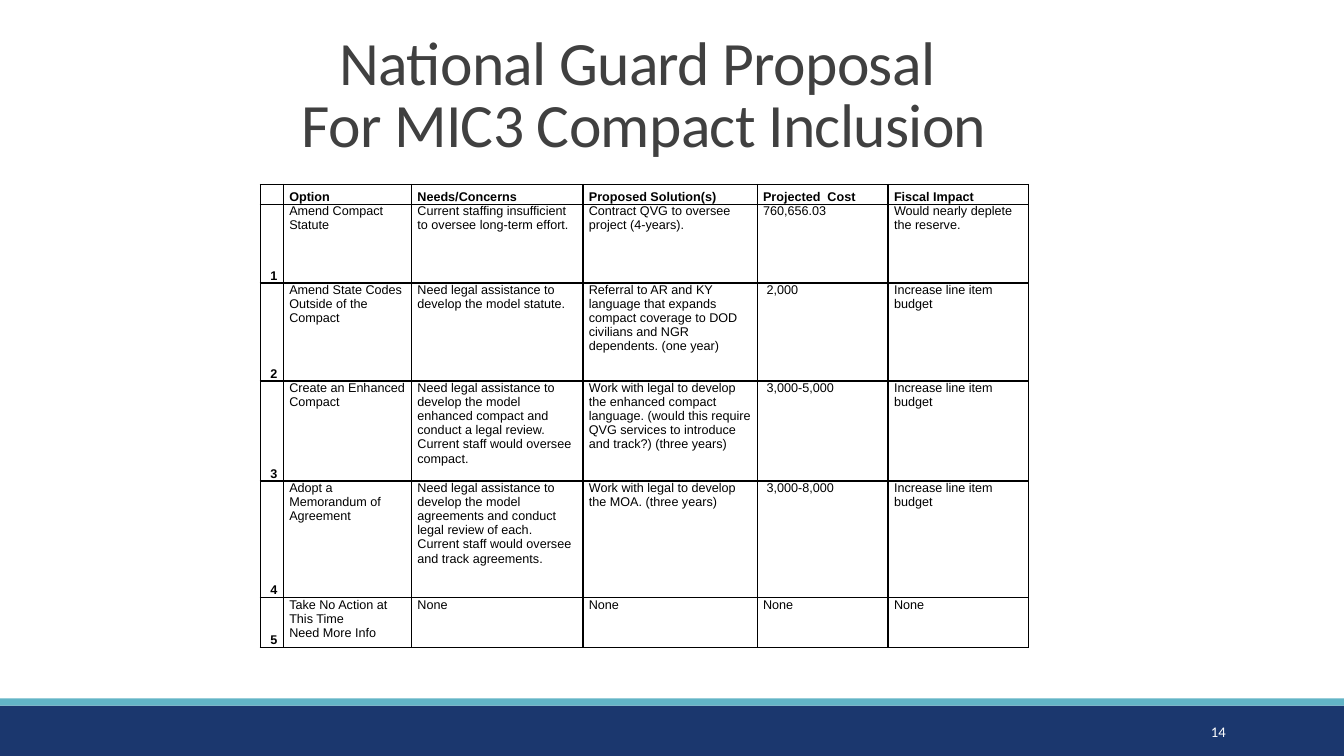
import pptx
import pptx.util
import pptx.dml.color
import pptx.enum.shapes
import pptx.enum.text
from lxml import etree
from pptx.oxml.ns import qn
from pptx.util import Cm

COLORS = {
    "navy": "1B376E",
    "teal": "62B4C6",
    "title": "404040",
    "black": "000000",
    "white": "FFFFFF",
}
ALIGN = pptx.enum.text.PP_ALIGN
ANCHOR = pptx.enum.text.MSO_ANCHOR

SLIDE_W, SLIDE_H = 33.87, 19.05
COL_WIDTHS = [0.58, 3.23, 4.32, 4.39, 3.3, 3.53]
ROW_HEIGHTS = [0.5, 1.98, 2.47, 2.52, 2.94, 1.25]

HEADERS = ["", "Option", "Needs/Concerns", "Proposed Solution(s)",
           "Projected  Cost", "Fiscal Impact"]
OPTIONS = [
    ["Amend Compact Statute",
     "Current staffing insufficient to oversee long-term effort.",
     "Contract QVG to oversee project (4-years).",
     "760,656.03", "Would nearly deplete the reserve."],
    ["Amend State Codes Outside of the Compact",
     "Need legal assistance to develop the model statute.",
     "Referral to AR and KY language that expands compact coverage to DOD "
     "civilians and NGR dependents. (one year)",
     " 2,000", "Increase line item budget"],
    ["Create an Enhanced Compact",
     "Need legal assistance to develop the model enhanced compact and conduct "
     "a legal review. Current staff would oversee compact.",
     "Work with legal to develop the enhanced compact language. (would this "
     "require QVG services to introduce and track?) (three years)",
     " 3,000-5,000", "Increase line item budget"],
    ["Adopt a Memorandum of Agreement",
     "Need legal assistance to develop the model agreements and conduct legal "
     "review of each. Current staff would oversee and track agreements.",
     "Work with legal to develop the MOA. (three years)",
     " 3,000-8,000", "Increase line item budget"],
    ["Take No Action at This Time\nNeed More Info"] + ["None"] * 4,
]


def rgb(name):
    return pptx.dml.color.RGBColor.from_string(COLORS[name])


def add_text(p, text, size=9, font="Arial", color="black", bold=False,
             align=ALIGN.LEFT, spacing=None):
    p.alignment = align
    r = p.add_run()
    r.text = text
    r.font.size = pptx.util.Pt(size)
    r.font.name = font
    r.font.bold = bold
    r.font.color.rgb = rgb(color)
    if spacing is not None:
        r._r.get_or_add_rPr().set("spc", str(spacing))


def add_bar(s, top, height, color):
    sp = s.shapes.add_shape(pptx.enum.shapes.MSO_SHAPE.RECTANGLE,
                            0, Cm(top), Cm(SLIDE_W), Cm(height))
    sp.shadow.inherit = False
    sp.fill.solid()
    sp.fill.fore_color.rgb = rgb(color)
    sp.line.fill.background()


def set_title(s, lines):
    sp = s.shapes.title
    sp.left, sp.top, sp.width, sp.height = Cm(2.26), Cm(0.13), Cm(27.94), Cm(4.04)
    tf = sp.text_frame
    tf.auto_size = pptx.enum.text.MSO_AUTO_SIZE.NONE
    tf.vertical_anchor = ANCHOR.BOTTOM
    p = tf.paragraphs[0]
    p.line_spacing = 0.85
    for i, line in enumerate(lines):
        if i:
            p.add_line_break()
        add_text(p, line, size=44, font="Calibri", color="title",
                 align=ALIGN.CENTER, spacing=-50)


def add_page_number(s, number):
    tf = s.shapes.add_textbox(Cm(27.51), Cm(17.93), Cm(3.63), Cm(1.02)).text_frame
    tf.word_wrap = True
    tf.vertical_anchor = ANCHOR.MIDDLE
    add_text(tf.paragraphs[0], number, size=10.5, font="Calibri",
             color="white", align=ALIGN.RIGHT)


def add_borders(cell):
    tcPr = cell._tc.get_or_add_tcPr()
    for i, side in enumerate(("a:lnL", "a:lnR", "a:lnT", "a:lnB")):
        ln = etree.Element(qn(side), w=str(pptx.util.Pt(1)))
        fill = etree.SubElement(ln, qn("a:solidFill"))
        etree.SubElement(fill, qn("a:srgbClr"), val=COLORS["black"])
        tcPr.insert(i, ln)


def fill_cell(cell, text, anchor=ANCHOR.TOP, **fmt):
    cell.margin_left = cell.margin_right = Cm(0.15)
    cell.margin_top = cell.margin_bottom = 0
    cell.vertical_anchor = anchor
    cell.fill.solid()
    cell.fill.fore_color.rgb = rgb("white")
    add_borders(cell)
    tf = cell.text_frame
    if not text:
        # An empty cell needs a small font to keep its row low
        etree.SubElement(tf.paragraphs[0]._p, qn("a:endParaRPr"), sz="900")
        return
    for i, line in enumerate(text.split("\n")):
        p = tf.add_paragraph() if i else tf.paragraphs[0]
        add_text(p, line, **fmt)


def add_options_table(s):
    frame = s.shapes.add_table(len(ROW_HEIGHTS), len(COL_WIDTHS), Cm(6.56), Cm(4.65),
                               Cm(sum(COL_WIDTHS)), Cm(sum(ROW_HEIGHTS)))
    table = frame.table
    table.first_row = table.horz_banding = False
    for col, width in zip(table.columns, COL_WIDTHS):
        col.width = Cm(width)
    for row, height in zip(table.rows, ROW_HEIGHTS):
        row.height = Cm(height)

    # Header row
    for j, text in enumerate(HEADERS):
        fill_cell(table.cell(0, j), text, ANCHOR.BOTTOM, bold=True)

    # Numbered options
    for i, option in enumerate(OPTIONS, 1):
        fill_cell(table.cell(i, 0), str(i), ANCHOR.BOTTOM, bold=True,
                  align=ALIGN.RIGHT)
        for j, text in enumerate(option, 1):
            fill_cell(table.cell(i, j), text)


def main():
    prs = pptx.Presentation()
    prs.slide_width, prs.slide_height = Cm(SLIDE_W), Cm(SLIDE_H)
    s = prs.slides.add_slide(prs.slide_layouts[5])

    # Footer bars
    add_bar(s, 17.78, 1.27, "navy")
    add_bar(s, 17.6, 0.18, "teal")

    # Title, page number and table
    set_title(s, ["National Guard Proposal ", "For MIC3 Compact Inclusion"])
    add_page_number(s, "14")
    add_options_table(s)

    prs.save("out.pptx")


if __name__ == "__main__":
    main()
